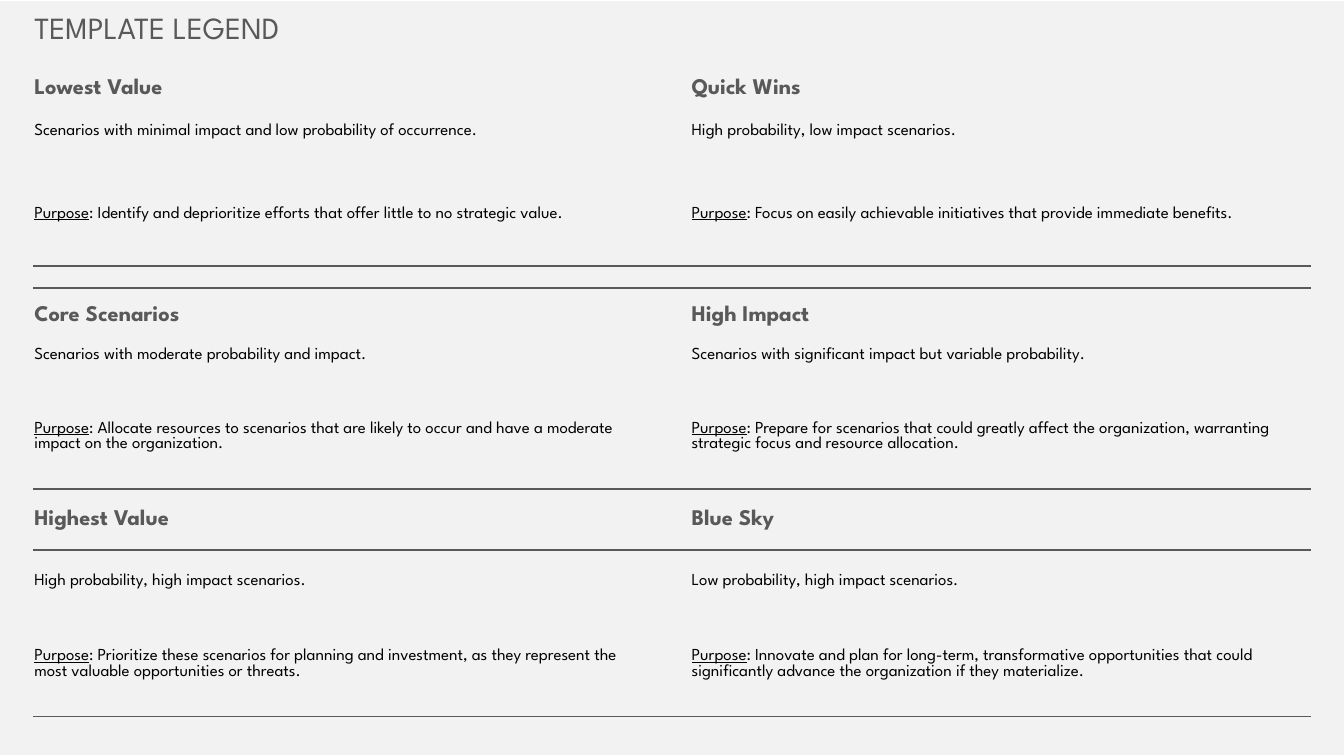
from lxml import etree
from pptx import Presentation
from pptx import util as u
from pptx.dml.color import RGBColor
from pptx.enum import text
from pptx.oxml import ns

FONT = "League Spartan"
COLORS = {"panel": "F2F2F2", "heading": "595959", "body": "000000"}
NO_STYLE = "{2D5ABB26-0587-4C30-8999-92F81FD0307C}"

COLUMNS = [0.33, 6.15, 0.37, 6.15, 0.33]
ROWS = [0.6, 0.38, 0.61, 1.04, 0.22, 0.38, 0.57, 1.04, 0.61, 0.61, 1.04, 0.38]
TEXT_COLUMNS = (1, 3)
RULED_COLUMNS = range(1, 4)

# Each band: its heading row, then a (heading, summary, purpose) per column.
BANDS = [
    (1, [
        ("Lowest Value",
         "Scenarios with minimal impact and low probability of occurrence.",
         "Identify and deprioritize efforts that offer little to no strategic value."),
        ("Quick Wins",
         "High probability, low impact scenarios.",
         "Focus on easily achievable initiatives that provide immediate benefits."),
    ]),
    (5, [
        ("Core Scenarios",
         "Scenarios with moderate probability and impact.",
         "Allocate resources to scenarios that are likely to occur and have a "
         "moderate impact on the organization."),
        ("High Impact",
         "Scenarios with significant impact but variable probability.",
         "Prepare for scenarios that could greatly affect the organization, "
         "warranting strategic focus and resource allocation."),
    ]),
    (8, [
        ("Highest Value",
         "High probability, high impact scenarios.",
         "Prioritize these scenarios for planning and investment, as they "
         "represent the most valuable opportunities or threats."),
        ("Blue Sky",
         "Low probability, high impact scenarios.",
         "Innovate and plan for long-term, transformative opportunities that "
         "could significantly advance the organization if they materialize."),
    ]),
]


def write(cell, words, size=12, color="body", bold=False, underline=False,
          anchor=text.MSO_ANCHOR.MIDDLE):
    """Append one formatted run to the cell."""
    cell.vertical_anchor = anchor
    run = cell.text_frame.paragraphs[0].add_run()
    run.text = words
    font = run.font
    font.name, font.size, font.bold, font.underline = FONT, u.Pt(size), bold, underline
    font.color.rgb = RGBColor.from_string(COLORS[color])


def rule(cell, side):
    """Draw a border on the top ("lnT") or bottom ("lnB") side of the cell."""
    line = etree.Element(ns.qn(f"a:{side}"), w=str(u.Pt(1.5)))
    fill = etree.SubElement(line, ns.qn("a:solidFill"))
    etree.SubElement(fill, ns.qn("a:srgbClr"), val=COLORS["heading"])
    cell._tc.get_or_add_tcPr().insert(0, line)


def add_grid(slide):
    frame = slide.shapes.add_table(len(ROWS), len(COLUMNS), 0, u.Inches(0.01),
                                   u.Inches(sum(COLUMNS)), u.Inches(sum(ROWS)))
    grid = frame.table
    grid.first_row = grid.horz_banding = False
    frame._element.find(f".//{ns.qn('a:tableStyleId')}").text = NO_STYLE
    for column, width in zip(grid.columns, COLUMNS):
        column.width = u.Inches(width)
    for row, height in zip(grid.rows, ROWS):
        row.height = u.Inches(height)
    for cell in grid.iter_cells():
        cell.margin_left = cell.margin_right = cell.margin_top = u.Inches(0.01)
        cell.margin_bottom = 0
        cell.fill.solid()
        cell.fill.fore_color.rgb = RGBColor.from_string(COLORS["panel"])
        # Small empty cells keep the narrow rows at their height.
        etree.SubElement(cell.text_frame.paragraphs[0]._p,
                         ns.qn("a:endParaRPr"), sz="800")
    return grid


def fill_band(grid, top, scenarios):
    heading_anchor = text.MSO_ANCHOR.MIDDLE if ROWS[top] > 0.5 else text.MSO_ANCHOR.BOTTOM
    for column, (heading, summary, purpose) in zip(TEXT_COLUMNS, scenarios):
        write(grid.cell(top, column), heading, size=16, color="heading",
              bold=True, anchor=heading_anchor)
        write(grid.cell(top + 1, column), summary)
        write(grid.cell(top + 2, column), "Purpose", underline=True)
        write(grid.cell(top + 2, column), f": {purpose}")
    for column in RULED_COLUMNS:
        rule(grid.cell(top + 2, column), "lnB")
        rule(grid.cell(top + 3, column), "lnT")


def main():
    deck = Presentation()
    deck.slide_width, deck.slide_height = u.Inches(13.33), u.Inches(7.5)
    slide = deck.slides.add_slide(deck.slide_layouts.get_by_name("Blank"))
    grid = add_grid(slide)
    write(grid.cell(0, 1), "TEMPLATE LEGEND", size=22, color="heading")
    for top, scenarios in BANDS:
        fill_band(grid, top, scenarios)
    deck.save("out.pptx")


if __name__ == "__main__":
    main()
